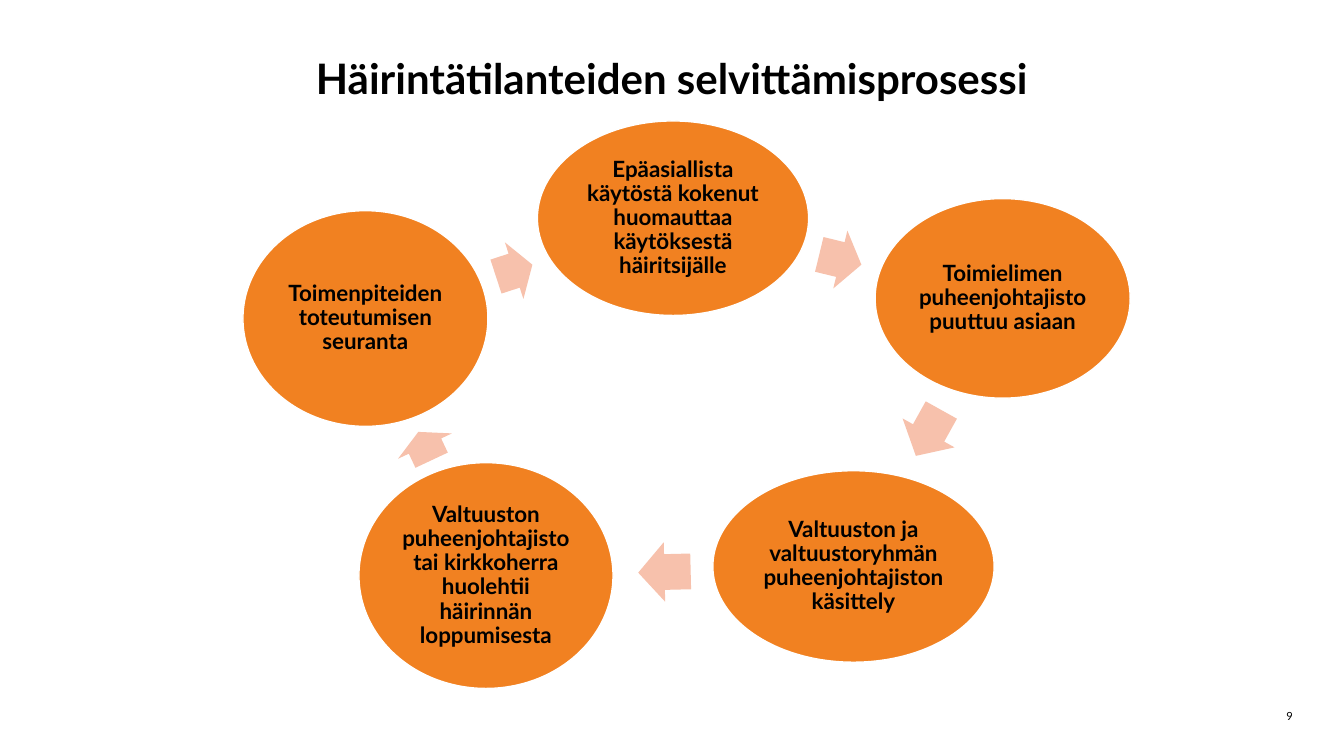
from pptx import Presentation
from pptx.dml.color import RGBColor
from pptx.enum.shapes import MSO_SHAPE
from pptx.enum.text import MSO_ANCHOR, PP_ALIGN
from pptx.util import Pt

EMU_PER_PX = 9144  # 100 px to the inch
SLIDE_SIZE = (1333, 750)
FONT = "Lato"
BLACK, WHITE, ORANGE, PEACH = "000000", "FFFFFF", "F18121", "F7C1AC"

TITLE = "Häirintätilanteiden selvittämisprosessi"
TITLE_BOX = (0, 52, 1333, 101)
PAGE_NUMBER = "9"
NUMBER_BOX = (1276, 700, 54, 20)

# Each step: text, ellipse box (left, top, width, height)
STEPS = [
    ("Epäasiallista käytöstä kokenut huomauttaa käytöksestä häiritsijälle",
     (533, 120, 269, 193)),
    ("Toimielimen puheenjohtajisto puuttuu asiaan", (868, 197, 253, 198)),
    ("Valtuuston ja valtuustoryhmän puheenjohtajiston käsittely",
     (707, 467, 279, 190)),
    ("Valtuuston puheenjohtajisto tai kirkkoherra huolehtii häirinnän loppumisesta",
     (356, 459, 252, 224)),
    ("Toimenpiteiden toteutumisen seuranta", (241, 209, 243, 214)),
]

# Arrow after each step: left, top, width, rotation in degrees
ARROWS = [
    (812, 228, 43, 13.7),
    (895, 400, 52, 119.1),
    (633, 538, 52, 178.6),
    (406, 413, 31, 244.8),
    (491, 239, 38, 341.9),
]
ARROW_HEIGHT = 59


def px(*lengths):
    return [length * EMU_PER_PX for length in lengths]


def color(hex_string):
    return RGBColor.from_string(hex_string)


def write(shape, text, size, bold, align, anchor, inset=0):
    frame = shape.text_frame
    frame.word_wrap = True
    frame.vertical_anchor = anchor
    (margin,) = px(inset)
    frame.margin_left = frame.margin_right = margin
    frame.margin_top = frame.margin_bottom = margin
    para = frame.paragraphs[0]
    para.alignment = align
    span = para.add_run()
    span.text = text
    span.font.name = FONT
    span.font.size = Pt(size)
    span.font.bold = bold
    span.font.color.rgb = color(BLACK)
    return para


def add_filled(page, kind, box, fill):
    shape = page.shapes.add_shape(kind, *px(*box))
    shape.shadow.inherit = False
    shape.fill.solid()
    shape.fill.fore_color.rgb = color(fill)
    return shape


def add_step(page, text, box):
    ellipse = add_filled(page, MSO_SHAPE.OVAL, box, ORANGE)
    ellipse.line.color.rgb = color(WHITE)
    ellipse.line.width = Pt(1)
    para = write(ellipse, text, 16, True, PP_ALIGN.CENTER, MSO_ANCHOR.MIDDLE, 2)
    para.line_spacing = 0.9


def add_arrow(page, left, top, width, rotation):
    box = (left, top, width, ARROW_HEIGHT)
    arrow = add_filled(page, MSO_SHAPE.RIGHT_ARROW, box, PEACH)
    arrow.line.fill.background()
    arrow.adjustments[0] = 0.6
    arrow.adjustments[1] = 0.5
    arrow.rotation = rotation


def main():
    deck = Presentation()
    deck.slide_width, deck.slide_height = px(*SLIDE_SIZE)
    page = deck.slides.add_slide(deck.slide_layouts[6])

    title = page.shapes.add_textbox(*px(*TITLE_BOX))
    write(title, TITLE, 30, True, PP_ALIGN.CENTER, MSO_ANCHOR.TOP)

    for (text, box), arrow in zip(STEPS, ARROWS):
        add_step(page, text, box)
        add_arrow(page, *arrow)

    number = page.shapes.add_textbox(*px(*NUMBER_BOX))
    write(number, PAGE_NUMBER, 8, False, PP_ALIGN.LEFT, MSO_ANCHOR.MIDDLE)

    deck.save("out.pptx")


if __name__ == "__main__":
    main()
